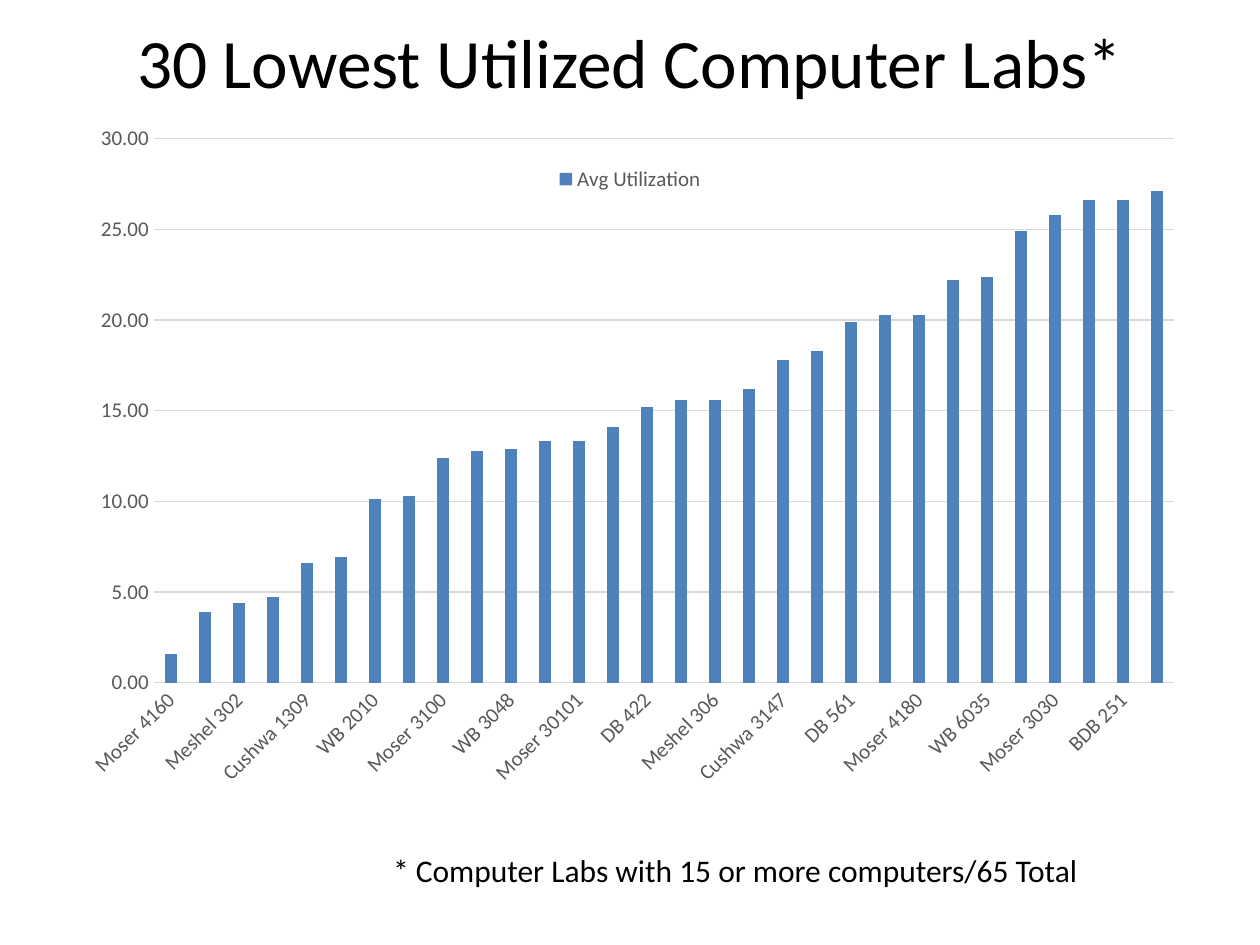
import pptx
import pptx.chart.data
import pptx.dml.color
import pptx.enum.chart
import pptx.enum.text
import pptx.oxml
import pptx.oxml.ns
import pptx.util

Pt = pptx.util.Pt
qn = pptx.oxml.ns.qn
FONT = "Calibri"
BLACK, GREY, PALE, BLUE = "000000", "595959", "D9D9D9", "4F81BD"
UTILIZATION = {
    "Moser 4160": 1.6, "BCOE 4301": 3.9, "Meshel 302": 4.4, "Moser 3150": 4.7,
    "Cushwa 1309": 6.6, "WB 6037": 6.9, "WB 2010": 10.1, "WCBA 1107": 10.3,
    "Moser 3100": 12.4, "Cushwa 1319": 12.8, "WB 3048": 12.9, "Meshel 354": 13.3,
    "Moser 30101": 13.3, "Phelps 34": 14.1, "DB 422": 15.2, "Meshel 301": 15.6,
    "Meshel 306": 15.6, "Meshel 352": 16.2, "Cushwa 3147": 17.8, "Moser 1320": 18.3,
    "DB 561": 19.9, "Vets Ctr": 20.3, "Moser 4180": 20.3, "Moser 1350": 22.2,
    "WB 6035": 22.4, "Moser 3040": 24.9, "Moser 3030": 25.8, "Moser 4290": 26.6,
    "BDB 251": 26.6, "WB 5043": 27.1,
}


def color(hex_text):
    """Turn a hex string into a colour."""
    return pptx.dml.color.RGBColor.from_string(hex_text)


def style_font(font, size, hex_text):
    """Set face, size and colour of a font."""
    font.name = FONT
    font.size = Pt(size)
    font.color.rgb = color(hex_text)


def style_line(line, hex_text):
    """Set a thin line of the given colour."""
    line.color.rgb = color(hex_text)
    line.width = Pt(0.75)


def write_line(frame, text, size):
    """Write one black line of text into a frame."""
    span = frame.paragraphs[0].add_run()
    span.text = text
    style_font(span.font, size, BLACK)


def manual_layout(left, top, width, height, inner=False):
    """Make a chart layout element from fractions of the chart."""
    parts = [("layoutTarget", "inner")] if inner else []
    parts += [("xMode", "edge"), ("yMode", "edge"),
              ("x", left), ("y", top), ("w", width), ("h", height)]
    body = "".join(f'<c:{name} val="{value}"/>' for name, value in parts)
    return pptx.oxml.parse_xml(
        f'<c:layout {pptx.oxml.ns.nsdecls("c")}>'
        f"<c:manualLayout>{body}</c:manualLayout></c:layout>")


def place_layout(parent, index, layout):
    """Replace the layout of a chart part."""
    for old in parent.findall(qn("c:layout")):
        parent.remove(old)
    parent.insert(index, layout)


def add_title(page, left, top, width, height):
    """Place and fill the title."""
    title = page.shapes.title
    title.left, title.top, title.width, title.height = map(Pt, (left, top, width, height))
    frame = title.text_frame
    frame.vertical_anchor = pptx.enum.text.MSO_ANCHOR.MIDDLE
    frame.paragraphs[0].alignment = pptx.enum.text.PP_ALIGN.CENTER
    write_line(frame, "30 Lowest Utilized Computer Labs*", 39.6)


def style_axes(chart):
    """Format the category and value axes."""
    none = pptx.enum.chart.XL_TICK_MARK.NONE
    labs, values = chart.category_axis, chart.value_axis
    for axis in (labs, values):
        axis.major_tick_mark = axis.minor_tick_mark = none
        style_font(axis.tick_labels.font, 12, GREY)
    style_line(labs.format.line, PALE)
    labs_xml = labs._element
    labs_xml.find(qn("c:txPr")).find(qn("a:bodyPr")).set("rot", "-2700000")
    skip = pptx.oxml.parse_xml(
        f'<c:tickLblSkip {pptx.oxml.ns.nsdecls("c")} val="2"/>')
    labs_xml.find(qn("c:noMultiLvlLbl")).addprevious(skip)
    values.minimum_scale, values.maximum_scale, values.major_unit = 0, 30, 5
    values.format.line.fill.background()
    values.has_major_gridlines = True
    style_line(values.major_gridlines.format.line, PALE)
    values.tick_labels.number_format = "0.00"
    values.tick_labels.number_format_is_linked = False


def style_legend(chart):
    """Put the legend inside the top of the plot."""
    chart.has_legend = True
    legend = chart.legend
    legend.position = pptx.enum.chart.XL_LEGEND_POSITION.BOTTOM
    legend.include_in_layout = False
    style_font(legend.font, 12, GREY)
    place_layout(legend._element, 1, manual_layout(0.43, 0.07, 0.14, 0.05))


def add_utilization_chart(page, left, top, width, height):
    """Add the column chart of lab utilization."""
    data = pptx.chart.data.CategoryChartData(number_format="0.00")
    data.categories = list(UTILIZATION)
    data.add_series("Avg Utilization", list(UTILIZATION.values()))
    chart = page.shapes.add_chart(
        pptx.enum.chart.XL_CHART_TYPE.COLUMN_CLUSTERED,
        Pt(left), Pt(top), Pt(width), Pt(height), data).chart
    style_font(chart.font, 10, BLACK)
    chart.has_title = False
    plot = chart.plots[0]
    plot.gap_width = 182
    plot.vary_by_categories = False
    fill = plot.series[0].format.fill
    fill.solid()
    fill.fore_color.rgb = color(BLUE)
    style_axes(chart)
    style_legend(chart)
    place_layout(chart._chartSpace.chart.plotArea, 0,
                 manual_layout(0.08, 0.04, 0.9, 0.74, inner=True))


def add_footnote(page, left, top, width, height):
    """Add the note below the chart."""
    box = page.shapes.add_textbox(Pt(left), Pt(top), Pt(width), Pt(height))
    frame = box.text_frame
    frame.word_wrap = False
    frame.auto_size = pptx.enum.text.MSO_AUTO_SIZE.SHAPE_TO_FIT_TEXT
    write_line(frame, "* Computer Labs with 15 or more computers/65 Total", 18)


def main():
    """Build and save the deck."""
    deck = pptx.Presentation()
    deck.slide_width, deck.slide_height = Pt(720), Pt(540)
    page = deck.slides.add_slide(deck.slide_layouts[5])
    add_title(page, 36, 6.5, 648, 56)
    add_utilization_chart(page, 36, 62.5, 648, 420)
    add_footnote(page, 217.5, 482.5, 414.5, 29)
    deck.save("out.pptx")


if __name__ == "__main__":
    main()
